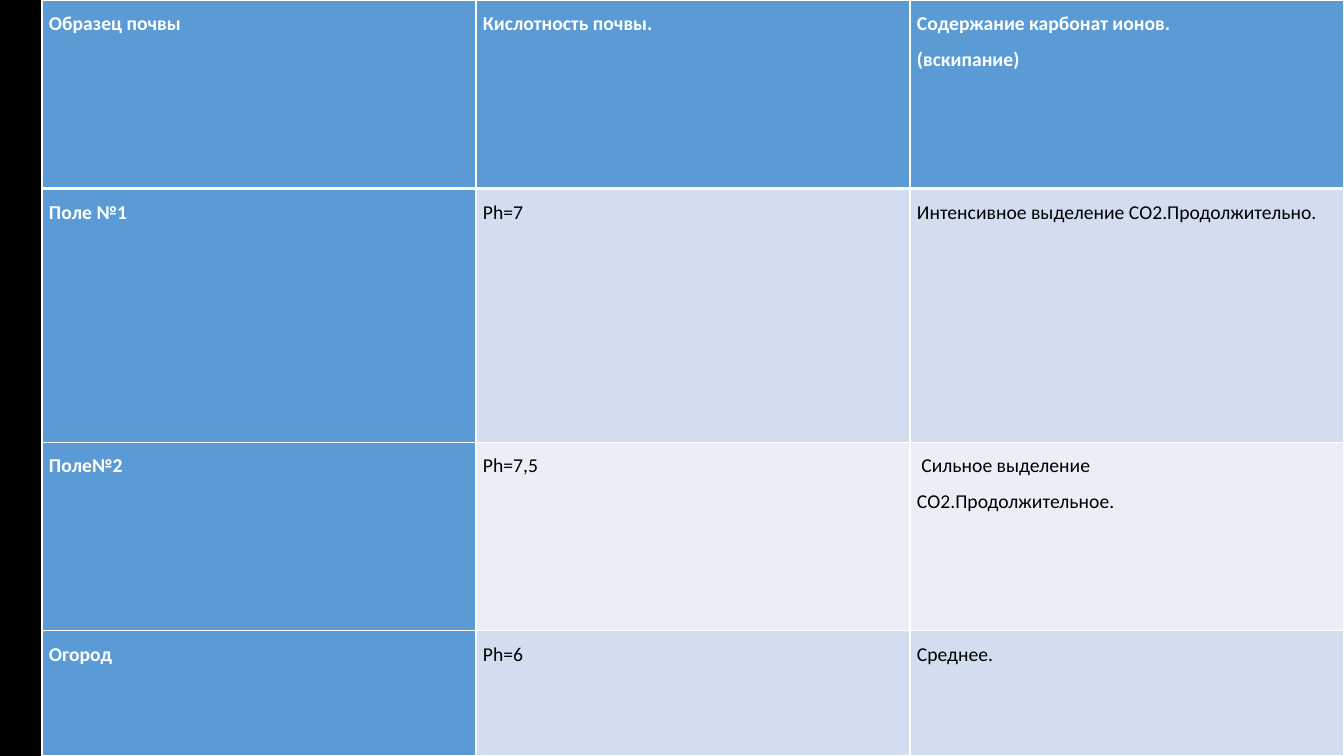
from lxml import etree
from pptx import Presentation
from pptx.dml.color import RGBColor
from pptx.enum.text import PP_ALIGN
from pptx.oxml.ns import qn
from pptx.util import Pt

JUSTIFY = PP_ALIGN.JUSTIFY
BLANK_LAYOUT = 6

# Content: one tuple per row, one line per paragraph
SOIL_ROWS = [
    ("Образец почвы", "Кислотность почвы.", "Содержание карбонат ионов.\n(вскипание)"),
    ("Поле №1", "Ph=7", "Интенсивное выделение СО2.Продолжительно."),
    ("Поле№2", "Ph=7,5", " Сильное выделение \nСО2.Продолжительное."),
    ("Огород", "Ph=6", "Cреднее."),
]
ROW_HEIGHTS = [134.7, 181.3, 134.7, 89.3]
COLUMN_WIDTH = 310
TABLE_LEFT = 30
COLORS = {
    "background": "000000",
    "heading": "5B9BD5",
    "odd row": "D2DEEF",
    "even row": "EAEFF7",
    "heading text": "FFFFFF",
    "body text": "000000",
    "border": "FFFFFF",
}


def rgb(name):
    return RGBColor.from_string(COLORS[name])


def set_borders(cell, row_index):
    """Thin white lines, with a thick one under the header row."""
    widths = {
        "lnL": 1,
        "lnR": 1,
        "lnT": 3 if row_index == 1 else 1,
        "lnB": 3 if row_index == 0 else 1,
    }
    properties = cell._tc.get_or_add_tcPr()
    for position, (side, width) in enumerate(widths.items()):
        line = etree.Element(qn(f"a:{side}"), w=str(Pt(width)))
        fill = etree.SubElement(line, qn("a:solidFill"))
        etree.SubElement(fill, qn("a:srgbClr"), val=COLORS["border"])
        properties.insert(position, line)


def fill_cell(cell, text, row_index, column_index):
    is_heading = row_index == 0 or column_index == 0
    stripe = "odd row" if row_index % 2 else "even row"
    cell.fill.solid()
    cell.fill.fore_color.rgb = rgb("heading" if is_heading else stripe)
    cell.margin_left = cell.margin_right = Pt(5)
    cell.margin_top = cell.margin_bottom = 0
    cell.text_frame.text = text
    for para in cell.text_frame.paragraphs:
        para.alignment = JUSTIFY
        para.line_spacing = 1.5
        para.font.name = "Calibri"
        para.font.size = Pt(14)
        para.font.bold = is_heading
        para.font.color.rgb = rgb("heading text" if is_heading else "body text")
    set_borders(cell, row_index)


def main():
    deck = Presentation()
    deck.slide_width, deck.slide_height = Pt(960), Pt(540)
    page = deck.slides.add_slide(deck.slide_layouts[BLANK_LAYOUT])
    page.background.fill.solid()
    page.background.fill.fore_color.rgb = rgb("background")

    # Soil table
    column_count = len(SOIL_ROWS[0])
    table = page.shapes.add_table(
        len(SOIL_ROWS), column_count, Pt(TABLE_LEFT), 0,
        Pt(COLUMN_WIDTH * column_count), Pt(sum(ROW_HEIGHTS)),
    ).table
    table.first_col = True
    for column in table.columns:
        column.width = Pt(COLUMN_WIDTH)
    for row_index, texts in enumerate(SOIL_ROWS):
        table.rows[row_index].height = Pt(ROW_HEIGHTS[row_index])
        for column_index, text in enumerate(texts):
            fill_cell(table.cell(row_index, column_index), text, row_index, column_index)

    deck.save("out.pptx")


if __name__ == "__main__":
    main()
